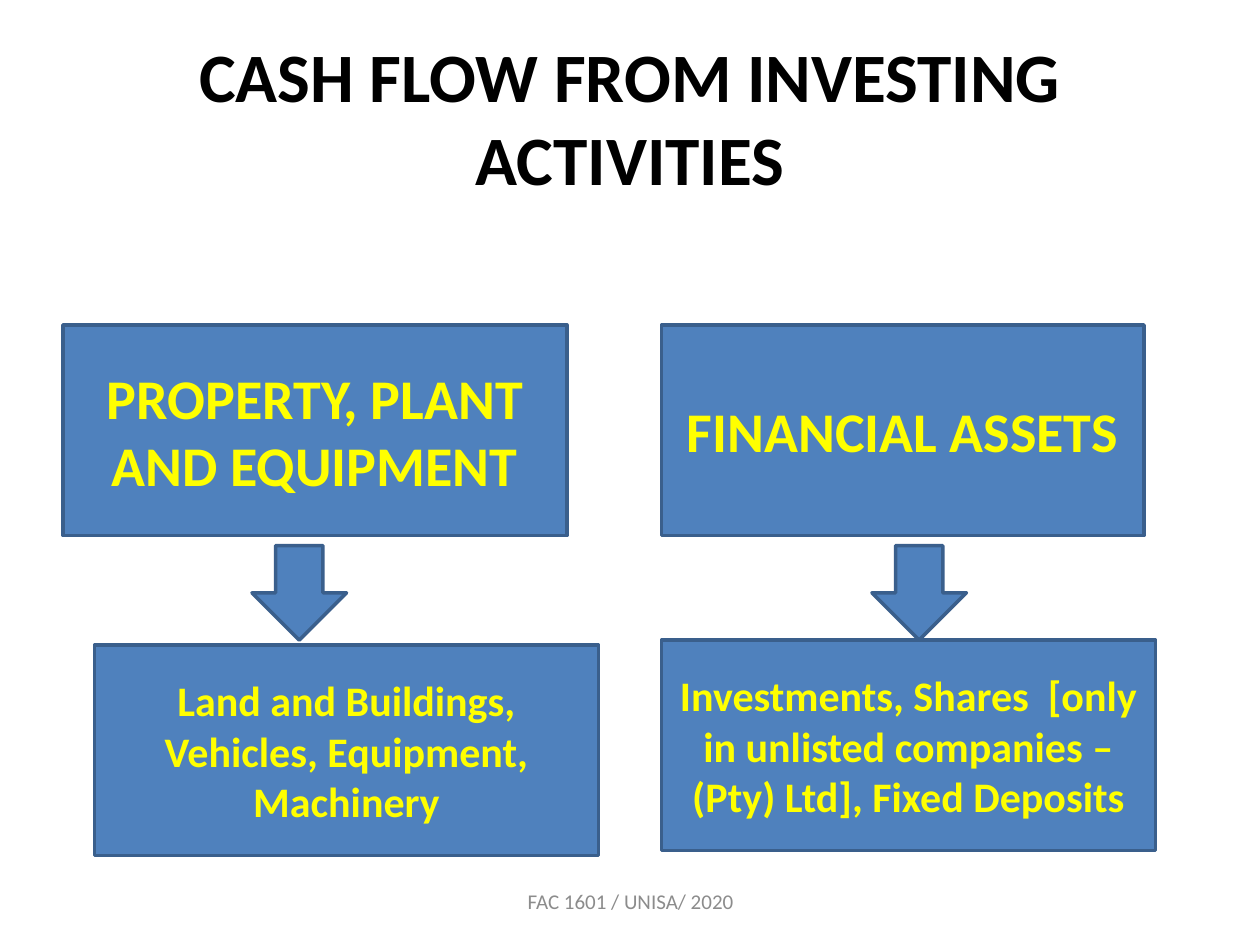
from dataclasses import dataclass

import pptx
import pptx.dml.color
import pptx.enum.shapes
import pptx.enum.text
import pptx.oxml.ns
import pptx.util
from lxml import etree
from pptx.util import Inches


@dataclass(frozen=True)
class Theme:
    font: str = "Calibri"
    title: str = "000000"
    fill: str = "4F81BD"
    line: str = "3A5F8C"
    label: str = "FFFF00"
    label_outline: str = "054697"
    footer: str = "8C8C8C"
    title_size: float = 39.6
    heading_size: float = 32
    detail_size: float = 24
    footer_size: float = 12


theme = Theme()
SHAPES = pptx.enum.shapes.MSO_SHAPE


def write_text(shape, text, size, color, bold=True):
    """Fill a shape with one centred paragraph and return its run."""
    frame = shape.text_frame
    frame.word_wrap = True
    frame.vertical_anchor = pptx.enum.text.MSO_ANCHOR.MIDDLE
    paragraph = frame.paragraphs[0]
    paragraph.alignment = pptx.enum.text.PP_ALIGN.CENTER
    run = paragraph.add_run()
    run.text = text
    paragraph.font.name = theme.font
    paragraph.font.size = pptx.util.Pt(size)
    paragraph.font.bold = bold
    paragraph.font.color.rgb = pptx.dml.color.RGBColor.from_string(color)
    return run


def add_block(slide, kind, left, top, width, height):
    """Add a preset shape in the slide's blue style."""
    shape = slide.shapes.add_shape(
        kind, Inches(left), Inches(top), Inches(width), Inches(height))
    shape.shadow.inherit = False
    shape.fill.solid()
    shape.fill.fore_color.rgb = pptx.dml.color.RGBColor.from_string(theme.fill)
    shape.line.color.rgb = pptx.dml.color.RGBColor.from_string(theme.line)
    shape.line.width = pptx.util.Pt(2)
    return shape


presentation = pptx.Presentation()
presentation.slide_width = Inches(10)
presentation.slide_height = Inches(7.5)
slide = presentation.slides.add_slide(presentation.slide_layouts[5])

title = slide.shapes.title
title.left, title.top = Inches(0.5), Inches(0.3)
title.width, title.height = Inches(9), Inches(1.25)
write_text(title, "CASH FLOW FROM INVESTING ACTIVITIES", theme.title_size, theme.title)

box_height = 1.67
boxes = [
    (0.5, 2.58, 4, theme.heading_size, "PROPERTY, PLANT AND EQUIPMENT"),
    (5.25, 2.58, 3.83, theme.heading_size, "FINANCIAL ASSETS"),
    (0.75, 5.12, 4, theme.detail_size,
     "Land and Buildings, Vehicles, Equipment, Machinery"),
    (5.25, 5.08, 3.92, theme.detail_size,
     "Investments, Shares  [only in unlisted companies – (Pty) Ltd], Fixed Deposits"),
]
qn = pptx.oxml.ns.qn
for left, top, width, size, text in boxes:
    box = add_block(slide, SHAPES.RECTANGLE, left, top, width, box_height)
    run = write_text(box, text, size, theme.label)
    # Thin outline around the letters
    outline = etree.Element(qn("a:ln"), w=str(pptx.util.Pt(1)))
    outline_fill = etree.SubElement(outline, qn("a:solidFill"))
    etree.SubElement(outline_fill, qn("a:srgbClr"), val=theme.label_outline)
    run.font._element.insert(0, outline)

for left in (2, 6.92):
    add_block(slide, SHAPES.DOWN_ARROW, left, 4.33, 0.75, 0.75)

footer = slide.shapes.add_textbox(Inches(3.42), Inches(6.95), Inches(3.17), Inches(0.4))
write_text(footer, "FAC 1601 / UNISA/ 2020", theme.footer_size, theme.footer, bold=False)

presentation.save("out.pptx")
